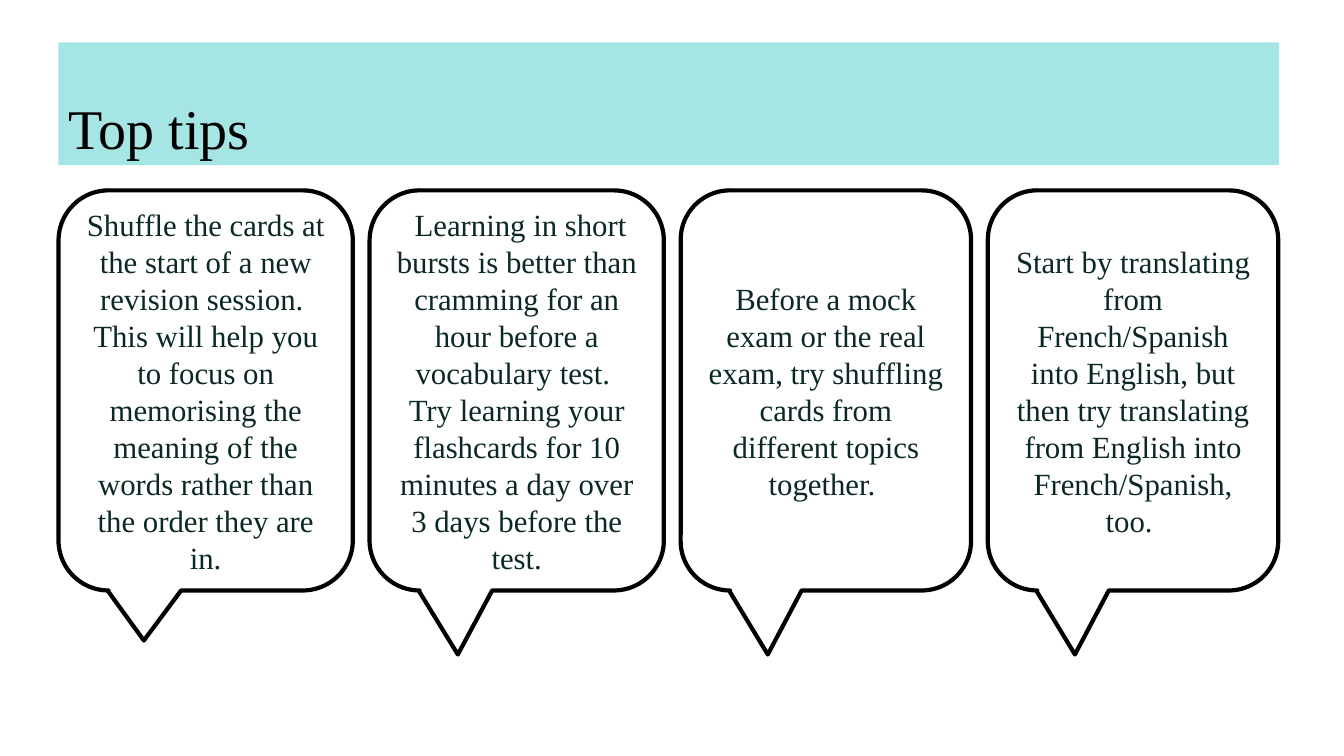
from pptx import Presentation
from pptx.dml.color import RGBColor
from pptx.enum.shapes import MSO_SHAPE as Shape
from pptx.enum.text import MSO_ANCHOR as Anchor, PP_ALIGN as Align
from pptx.util import Pt

AQUA = RGBColor(0xA5, 0xE6, 0xE4)
WHITE = RGBColor(0xFF, 0xFF, 0xFF)
BLACK = RGBColor(0, 0, 0)
INK = RGBColor(0x0B, 0x28, 0x27)
FONT = "Times New Roman"

LEFT = 41.8
GAP = 12
LONG, SHORT = (-0.2, 0.66, 0.17), (-0.21, 0.625, 0.17)

# width, tail, text
TIPS = [
    (210.2, SHORT,
     "Shuffle the cards at the start of a new revision session.  This will "
     "help you to focus on memorising the meaning of the words rather than "
     "the order they are in."),
    (210.2, LONG,
     " Learning in short bursts is better than cramming for an hour before a "
     "vocabulary test.  Try learning your flashcards for 10 minutes a day "
     "over 3 days before the test."),
    (207.4, LONG,
     "Before a mock exam or the real exam, try shuffling cards from "
     "different topics together. "),
    (207.4, LONG,
     "Start by translating from French/Spanish into English, but then try "
     "translating from English into French/Spanish, too. "),
]


def add_box(slide, kind, box, fill):
    shape = slide.shapes.add_shape(kind, *map(Pt, box))
    shape.shadow.inherit = False
    shape.fill.solid()
    shape.fill.fore_color.rgb = fill
    shape.line.fill.background()
    return shape


def write(shape, text, size, color, align, anchor):
    frame = shape.text_frame
    frame.word_wrap = True
    frame.vertical_anchor = anchor
    para = frame.paragraphs[0]
    para.alignment = align
    run = para.add_run()
    run.text = text
    run.font.name = FONT
    run.font.size = Pt(size)
    run.font.color.rgb = color


def add_title(slide, box):
    bar = add_box(slide, Shape.RECTANGLE, box, AQUA)
    write(bar, "Top tips", 40, BLACK, Align.LEFT, Anchor.BOTTOM)


def add_tips(slide, left, top, height):
    """Lay the speech bubbles in a row with equal gaps."""
    for width, tail, text in TIPS:
        box = left, top, width, height
        bubble = add_box(slide, Shape.ROUNDED_RECTANGULAR_CALLOUT, box, WHITE)
        for i, value in enumerate(tail):
            bubble.adjustments[i] = value
        bubble.line.color.rgb = BLACK
        bubble.line.width = Pt(3)
        write(bubble, text, 22, INK, Align.CENTER, Anchor.MIDDLE)
        left += width + GAP


def main():
    prs = Presentation()
    prs.slide_width, prs.slide_height = Pt(960), Pt(540)
    slide = prs.slides.add_slide(prs.slide_layouts[6])
    add_title(slide, (LEFT, 30.2, 872, 87.8))
    add_tips(slide, LEFT, 136, 285.8)
    prs.save("out.pptx")


if __name__ == "__main__":
    main()
